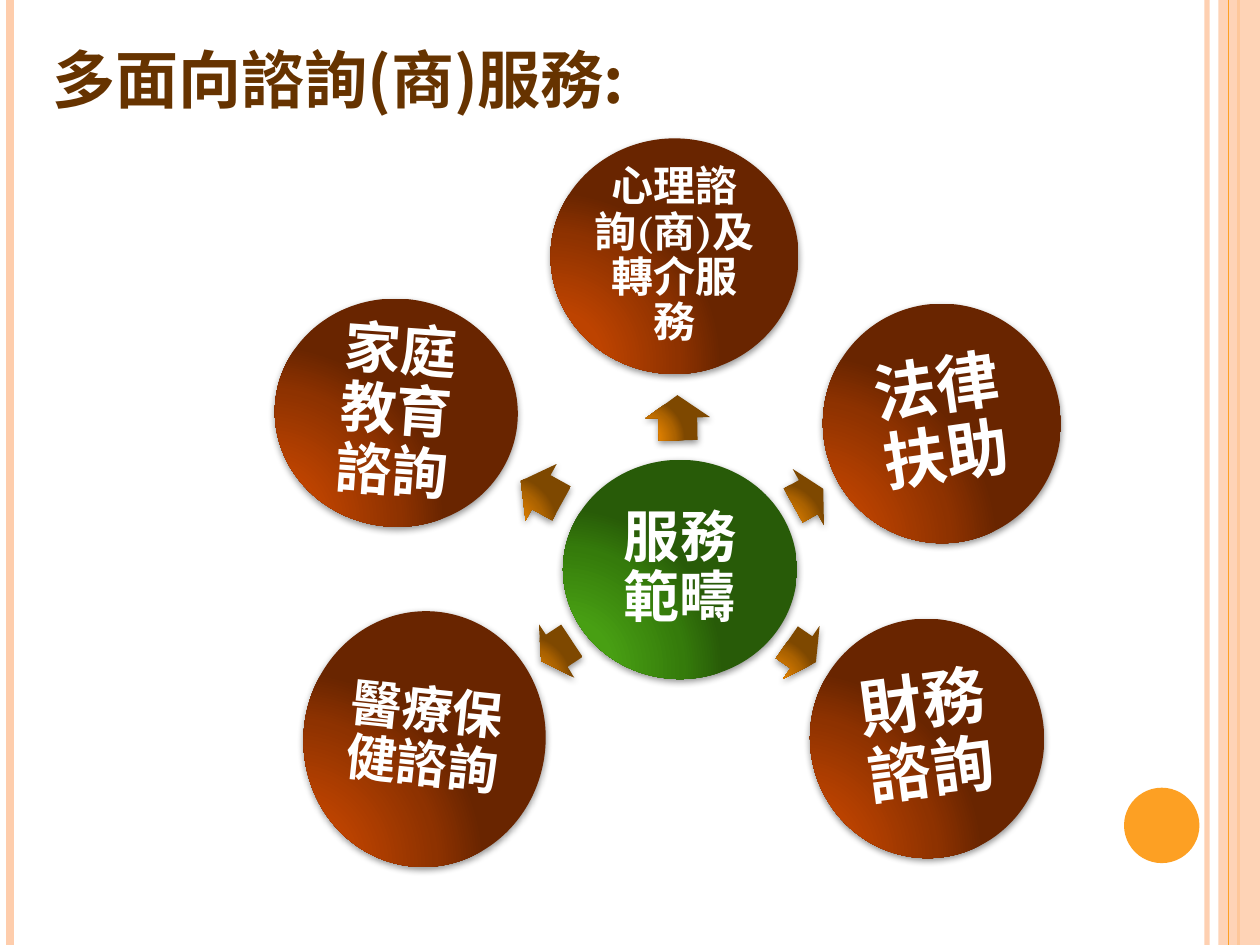
from lxml import etree
from pptx import Presentation
from pptx import util as u
from pptx.dml.color import RGBColor
from pptx.enum import shapes, text
from pptx.oxml import parse_xml
from pptx.oxml.ns import nsdecls, qn

BROWN = ("C44500", "BD4300", "8E3200", "692500")
GREEN = ("4BA514", "489F13", "357B0B", "285B08")
AMBER = ("EC8700", "E38200", "AB6200", "7E4800")
STOPS = (0, 30, 75, 100)
PEACH, ORANGE = "FECDAC", "FDA023"


def rgb(value):
    return RGBColor.from_string(value)


def box(*lengths):
    return [u.Cm(v) for v in lengths]


def set_alpha(fill, percent):
    color = fill._xPr.find(".//" + qn("a:srgbClr"))
    etree.SubElement(color, qn("a:alpha")).set("val", str(percent * 1000))


class Deck:
    """Holds the style and the current slide."""
    font, title_font = "Cambria", "Noto Sans CJK SC"
    white, title_color = "FFFFFF", "663300"

    def __init__(self, width, height):
        self.prs = Presentation()
        self.prs.slide_width, self.prs.slide_height = box(width, height)
        self.height = height
        self.s = self.prs.slides.add_slide(self.prs.slide_layouts[5])

    def run(self, p, words, size, font, color):
        r = p.add_run()
        r.text = words
        r.font.size, r.font.name, r.font.bold = u.Pt(size), font, True
        r.font.color.rgb = rgb(color)
        return r

    def title(self, words, *at):
        sp = self.s.shapes.title
        sp.left, sp.top, sp.width, sp.height = box(*at)
        tf = sp.text_frame
        tf.word_wrap, tf.auto_size = True, text.MSO_AUTO_SIZE.NONE
        tf.vertical_anchor = text.MSO_ANCHOR.BOTTOM
        p = tf.paragraphs[0]
        p.alignment = text.PP_ALIGN.LEFT
        p.space_before, p.space_after = u.Pt(28.4), u.Pt(14.2)
        p._p.get_or_add_pPr().set("marL", str(u.Cm(0.3)))
        r = self.run(p, words, 36, self.title_font, self.title_color)
        ea = etree.SubElement(r.font._element, qn("a:ea"))
        ea.set("typeface", self.title_font)

    def stripe(self, x, color, width, alpha=100):
        line = self.s.shapes.add_connector(
            shapes.MSO_CONNECTOR.STRAIGHT, *box(x, 0, x, self.height))
        line.line.width = u.Pt(width)
        line.line.color.rgb = rgb(color)
        set_alpha(line.line.fill, alpha)
        etree.SubElement(line._element.spPr, qn("a:effectLst"))

    def shape(self, kind, at, color=None, alpha=100):
        sp = self.s.shapes.add_shape(kind, *box(*at))
        sp.shadow.inherit = False
        sp.line.fill.background()
        if color:
            sp.fill.solid()
            sp.fill.fore_color.rgb = rgb(color)
            set_alpha(sp.fill, alpha)
        return sp

    def glossy(self, kind, at, colors, rotation):
        """A shape with a radial gradient and a soft shadow below."""
        sp = self.shape(kind, at)
        sp.rotation = rotation
        stops = "".join(
            f'<a:gs pos="{pos * 1000}"><a:srgbClr val="{c}"/></a:gs>'
            for pos, c in zip(STOPS, colors))
        spPr = sp._element.spPr
        spPr.find(qn("a:prstGeom")).addnext(parse_xml(
            f'<a:gradFill {nsdecls("a")} rotWithShape="1">'
            f'<a:gsLst>{stops}</a:gsLst><a:path path="circle">'
            '<a:fillToRect l="5000" t="100000" r="120000" b="10000"/>'
            '</a:path></a:gradFill>'))
        spPr.find(qn("a:effectLst")).append(parse_xml(
            f'<a:outerShdw {nsdecls("a")} blurRad="{u.Pt(4)}" '
            f'dist="{u.Pt(1.6)}" dir="5400000" rotWithShape="0">'
            '<a:srgbClr val="000000"><a:alpha val="42000"/></a:srgbClr>'
            '</a:outerShdw>'))
        return sp

    def bubble(self, words, at, size, colors=BROWN, rotation=0, font=font):
        sp = self.glossy(shapes.MSO_SHAPE.OVAL, at, colors, rotation)
        tf = sp.text_frame
        tf.word_wrap = True
        tf.vertical_anchor = text.MSO_ANCHOR.MIDDLE
        tf.margin_left = tf.margin_right = u.Cm(0.12)
        tf.margin_top = tf.margin_bottom = u.Cm(0.12)
        p = tf.paragraphs[0]
        p.alignment, p.line_spacing = text.PP_ALIGN.CENTER, 0.9
        self.run(p, words, size, font, self.white)

    def arrow(self, at, rotation):
        sp = self.glossy(shapes.MSO_SHAPE.RIGHT_ARROW, at, AMBER, rotation)
        sp.adjustments[0], sp.adjustments[1] = 0.6, 0.5


def main():
    deck = Deck(25.4, 19.05)

    # Side decoration
    deck.stripe(24.33, PEACH, 3, 93)
    deck.stripe(0.2, PEACH, 4.5)
    deck.stripe(24.97, ORANGE, 1.5)
    deck.shape(shapes.MSO_SHAPE.RECTANGLE, (24.56, 0, 0.84, 19.05), PEACH, 87)
    deck.stripe(24.77, ORANGE, 0.75)
    deck.shape(shapes.MSO_SHAPE.OVAL, (22.66, 15.88, 1.52, 1.52), ORANGE)

    deck.title("多面向諮詢(商)服務:", 0.5, 0, 14.78, 2.46)

    # Hub
    deck.bubble("服務範疇", (11.35, 9.27, 4.72, 4.42), 32, GREEN)

    # Arrows, clockwise from the top: left, top, width, rotation
    for x, y, width, rotation in (
            (13.21, 7.77, 0.91, 269),
            (15.95, 9.37, 0.69, 330.9),
            (15.8, 12.5, 0.71, 34.5),
            (10.85, 12.47, 0.74, 146.5),
            (10.44, 9.27, 0.94, 208.9)):
        deck.arrow((x, y, width, 1.3), rotation)

    # Services, clockwise from the top
    for words, at, size, rotation, font in (
            ("心理諮詢(商)及轉介服務", (11.1, 2.79, 5, 4.75), 24, 0, "Cambria"),
            ("法律扶助", (16.59, 6.12, 4.8, 4.83), 36, 351.8, "Arial"),
            ("財務諮詢", (16.33, 12.47, 4.72, 4.83), 36, 352.5, "Cambria"),
            ("醫療保健諮詢", (6.12, 12.32, 4.88, 5.16), 29, 6.1, "Cambria"),
            ("家庭教育諮詢", (5.54, 6.02, 4.9, 4.6), 32, 4.1, "Cambria")):
        deck.bubble(words, at, size, rotation=rotation, font=font)

    deck.prs.save("out.pptx")


if __name__ == "__main__":
    main()
